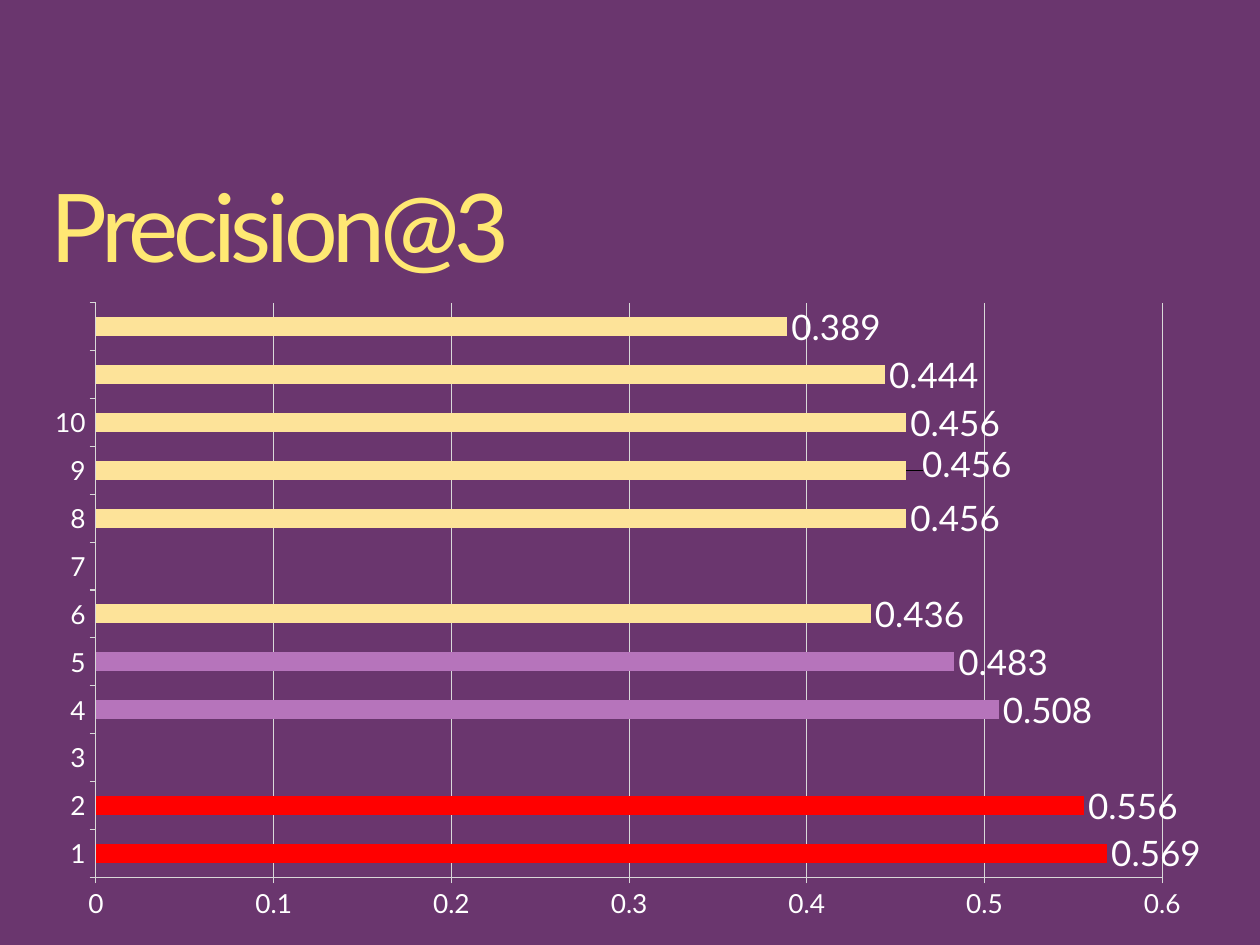
import lxml.etree
import pptx
import pptx.chart.data
import pptx.dml.color
import pptx.enum.chart
import pptx.enum.text
import pptx.oxml
import pptx.oxml.ns
import pptx.util

PURPLE = pptx.dml.color.RGBColor(0x6A, 0x36, 0x6E)
YELLOW = pptx.dml.color.RGBColor(0xFF, 0xE8, 0x73)
CREAM = pptx.dml.color.RGBColor(0xFD, 0xE3, 0x99)
RED = pptx.dml.color.RGBColor(0xFF, 0x00, 0x00)
LILAC = pptx.dml.color.RGBColor(0xB6, 0x74, 0xBB)
WHITE = pptx.dml.color.RGBColor(0xFF, 0xFF, 0xFF)
GRID = pptx.dml.color.RGBColor(0xD9, 0xD9, 0xD9)

PRECISIONS = [0.569, 0.556, None, 0.508, 0.483, 0.436,
              None, 0.456, 0.456, 0.456, 0.444, 0.389]
RANKS = [str(rank) if rank <= 10 else "" for rank in range(1, 13)]
HIGHLIGHTS = {0: RED, 1: RED, 3: LILAC, 4: LILAC}


class PrecisionPage:
    """Hold the style and the current slide, placing elements by shares of its size."""

    font_name = "Lato"

    def __init__(self, deck):
        self.deck = deck
        self.page = deck.slides.add_slide(deck.slide_layouts[5])
        self.page.background.fill.solid()
        self.page.background.fill.fore_color.rgb = PURPLE

    def frame(self, left, top, width, height):
        across, down = self.deck.slide_width, self.deck.slide_height
        return int(left * across), int(top * down), int(width * across), int(height * down)

    def style(self, font, size, color):
        font.name = self.font_name
        font.size = pptx.util.Pt(size)
        font.bold = False
        font.color.rgb = color

    def title(self, words, *shares):
        box = self.page.shapes.title
        box.left, box.top, box.width, box.height = self.frame(*shares)
        text = box.text_frame
        text.margin_left = text.margin_right = text.margin_top = text.margin_bottom = 0
        text.word_wrap = True
        text.auto_size = pptx.enum.text.MSO_AUTO_SIZE.NONE
        text.vertical_anchor = pptx.enum.text.MSO_ANCHOR.BOTTOM
        para = text.paragraphs[0]
        para.alignment = pptx.enum.text.PP_ALIGN.LEFT
        para.line_spacing = 0.9
        span = para.add_run()
        span.text = words
        self.style(span.font, 65, YELLOW)
        span.font._element.set("spc", "-360")

    def layout(self, **settings):
        namespace = pptx.oxml.ns.nsdecls("c")
        parts = "".join(f'<c:{key} val="{value}"/>' for key, value in settings.items())
        return pptx.oxml.parse_xml(
            f"<c:layout {namespace}><c:manualLayout>{parts}</c:manualLayout></c:layout>")

    def axis(self, axis):
        self.style(axis.tick_labels.font, 18, WHITE)
        axis.major_tick_mark = pptx.enum.chart.XL_TICK_MARK.OUTSIDE
        axis.minor_tick_mark = pptx.enum.chart.XL_TICK_MARK.NONE
        axis.format.line.color.rgb = GRID
        axis.format.line.width = pptx.util.Pt(0.75)

    def labels(self, labels):
        self.style(labels.font, 24, WHITE)
        labels.position = pptx.enum.chart.XL_LABEL_POSITION.OUTSIDE_END

    def bar_chart(self, categories, values, highlights, *shares):
        data = pptx.chart.data.CategoryChartData()
        data.categories = categories
        data.add_series("Series 1", values)
        chart = self.page.shapes.add_chart(
            pptx.enum.chart.XL_CHART_TYPE.BAR_CLUSTERED, *self.frame(*shares), data).chart
        chart.has_legend = chart.has_title = False
        self.style(chart.font, 18, WHITE)
        self.axis(chart.category_axis)
        self.axis(chart.value_axis)
        chart.value_axis.minimum_scale = 0
        chart.value_axis.maximum_scale = 0.6
        chart.value_axis.major_unit = 0.1
        chart.value_axis.has_major_gridlines = True
        gridline = chart.value_axis.major_gridlines.format.line
        gridline.color.rgb = GRID
        gridline.width = pptx.util.Pt(0.75)

        plot = chart.plots[0]
        plot.gap_width = 150
        plot.vary_by_categories = False
        series = plot.series[0]
        series.format.fill.solid()
        series.format.fill.fore_color.rgb = CREAM
        for index, color in highlights.items():
            fill = series.points[index].format.fill
            fill.solid()
            fill.fore_color.rgb = color
        series.data_labels.show_value = True
        self.labels(series.data_labels)
        self.labels(series.points[8].data_label)
        nudged = series._element.xpath("c:dLbls/c:dLbl")[0]
        nudged.insert(1, self.layout(x=0.01, y=-0.01))

        area = chart._chartSpace.xpath("c:chart/c:plotArea")[0]
        for old in area.xpath("c:layout"):
            area.remove(old)
        area.insert(0, self.layout(layoutTarget="inner", xMode="edge", yMode="edge",
                                   x=0.055, y=0.02, w=0.91, h=0.895))


def main():
    deck = pptx.Presentation()
    deck.slide_width = pptx.util.Inches(12)
    deck.slide_height = pptx.util.Inches(9)
    page = PrecisionPage(deck)
    page.title("Precision@3", 0.04, 0.19, 0.92, 0.11)
    page.bar_chart(RANKS, PRECISIONS, HIGHLIGHTS, 0.025, 0.307, 0.93, 0.679)
    deck.save("out.pptx")


if __name__ == "__main__":
    main()
